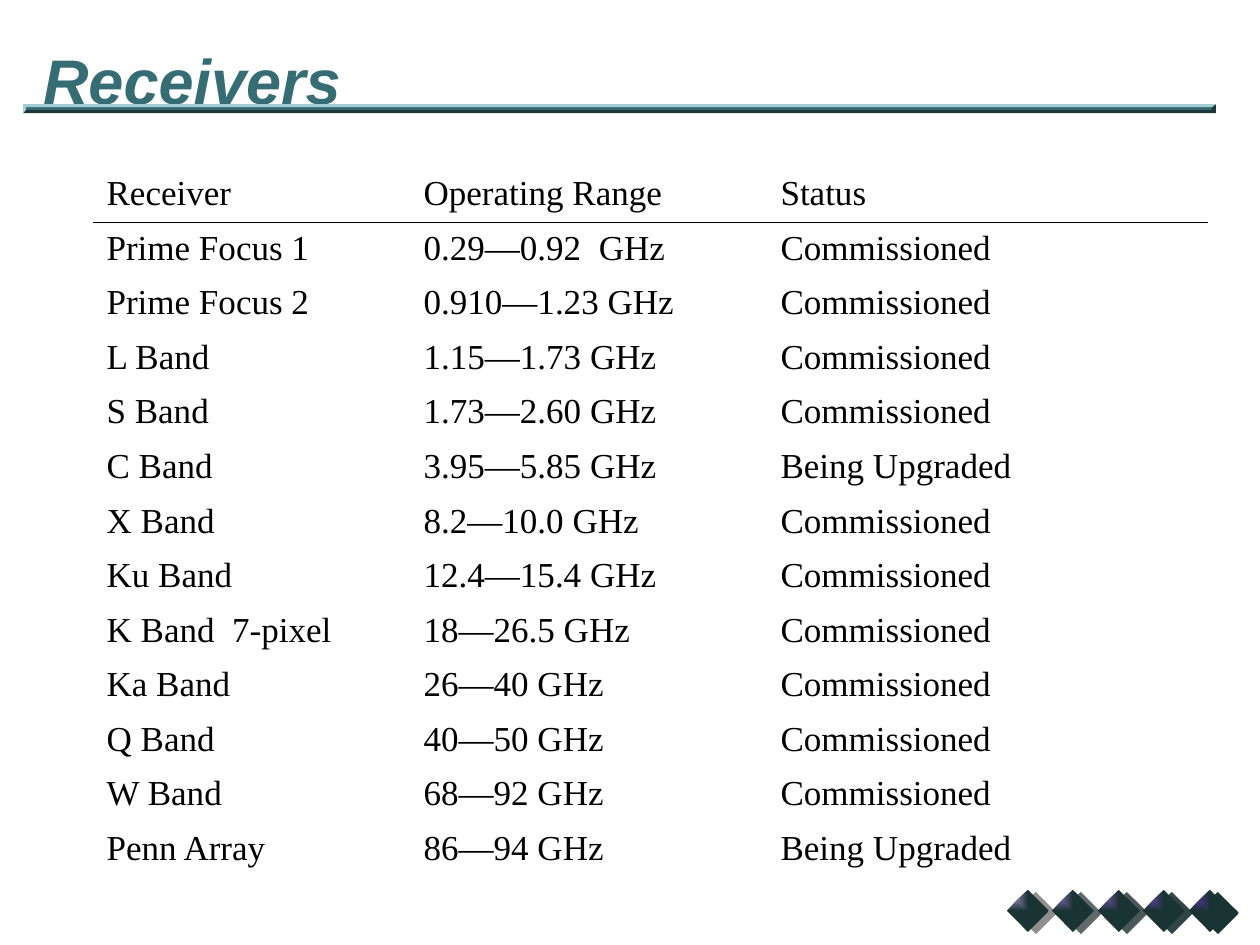
import pptx
import pptx.dml.color
import pptx.enum.shapes
import pptx.enum.text
import pptx.oxml
import pptx.oxml.ns
import pptx.util

EMU_PER_PX = 914400 / 126
NAMESPACE = pptx.oxml.ns.nsdecls("a")


def px(length):
    return pptx.util.Emu(round(length * EMU_PER_PX))


def color(hex_string):
    return pptx.dml.color.RGBColor.from_string(hex_string)


class SlideBuilder:
    teal = "366C74"
    dark_teal = "1B373A"
    light_teal = "A1CDD2"
    diamond_dark = "1A3333"
    title_font = "Arial"
    table_font = "Times New Roman"

    def __init__(self, slide):
        self.slide = slide

    def title(self, text, left, top, width, height):
        shape = self.slide.shapes.title
        shape.left, shape.top = px(left), px(top)
        shape.width, shape.height = px(width), px(height)
        frame = shape.text_frame
        frame.text = text
        frame.auto_size = pptx.enum.text.MSO_AUTO_SIZE.NONE
        frame.vertical_anchor = pptx.enum.text.MSO_ANCHOR.TOP
        frame.margin_left = frame.margin_right = frame.margin_bottom = 0
        frame.margin_top = px(6)
        paragraph = frame.paragraphs[0]
        paragraph.alignment = pptx.enum.text.PP_ALIGN.LEFT
        font = paragraph.font
        font.name, font.size = self.title_font, pptx.util.Pt(36)
        font.bold = font.italic = True
        font.color.rgb = color(self.teal)

    def finish(self, shape, fill):
        shape.shadow.inherit = False
        shape.line.fill.background()
        shape.fill.solid()
        shape.fill.fore_color.rgb = color(fill)

    def bar(self, left, top, width, height, fill):
        shape = self.slide.shapes.add_shape(
            pptx.enum.shapes.MSO_SHAPE.RECTANGLE, px(left), px(top), px(width), px(height))
        self.finish(shape, fill)

    def outline(self, points, fill):
        start, *rest = points
        builder = self.slide.shapes.build_freeform(*start, scale=EMU_PER_PX)
        builder.add_line_segments(rest, close=True)
        self.finish(builder.convert_to_shape(), fill)

    def diamond(self, left, top, size, inner, outer):
        shape = self.slide.shapes.add_shape(
            pptx.enum.shapes.MSO_SHAPE.DIAMOND, px(left), px(top), px(size), px(size))
        self.finish(shape, outer)
        shape.fill.gradient()
        for stop, stop_color in zip(shape.fill.gradient_stops, (inner, outer)):
            stop.color.rgb = color(stop_color)
        gradient = shape.element.spPr.find(pptx.oxml.ns.qn("a:gradFill"))
        gradient.remove(gradient.find(pptx.oxml.ns.qn("a:lin")))
        gradient.append(pptx.oxml.parse_xml(
            f'<a:path {NAMESPACE} path="rect"><a:fillToRect r="100000" b="100000"/></a:path>'))

    def borders(self, cell, top, bottom):
        properties = cell._tc.get_or_add_tcPr()
        sides = {"lnL": "FFFFFF", "lnR": "FFFFFF", "lnT": top, "lnB": bottom}
        for index, (side, line_color) in enumerate(sides.items()):
            properties.insert(index, pptx.oxml.parse_xml(
                f'<a:{side} {NAMESPACE} w="12700"><a:solidFill>'
                f'<a:srgbClr val="{line_color}"/></a:solidFill></a:{side}>'))

    def table(self, rows, left, top, widths, height):
        table = self.slide.shapes.add_table(
            len(rows), len(widths), px(left), px(top), px(sum(widths)), px(height)).table
        table.first_row = table.horz_banding = False
        for column, width in zip(table.columns, widths):
            column.width = px(width)
        for row_index, row in enumerate(rows):
            for column_index, text in enumerate(row):
                cell = table.cell(row_index, column_index)
                cell.text = text
                cell.fill.background()
                font = cell.text_frame.paragraphs[0].font
                font.name, font.size = self.table_font, pptx.util.Pt(20)
                font.color.rgb = color("000000")
                self.borders(cell,
                             top="000000" if row_index == 1 else "FFFFFF",
                             bottom="000000" if row_index == 0 else "FFFFFF")


def main():
    presentation = pptx.Presentation()
    presentation.slide_width = px(1260)
    presentation.slide_height = px(945)
    builder = SlideBuilder(presentation.slides.add_slide(presentation.slide_layouts[5]))

    back_colors = [("F2CCFF", "8F8F8F"), ("DEC7E5", "606A6A"), ("D3C4D9", "495858"),
                   ("C9C2CC", "314545"), ("BFBFBF", "1A3333")]
    front_colors = [(inner, builder.diamond_dark)
                    for inner in ("DDB2F9", "B27FEC", "9D66E6", "874CDF", "7233D9")]
    for left, top, colors in ((1015, 892, back_colors), (1007, 890, front_colors)):
        for index, (inner, outer) in reversed(list(enumerate(colors))):
            builder.diamond(left + index * 91 // 2, top, 42, inner, outer)

    builder.title("Receivers", 43, 35, 1153, 67)
    builder.bar(26, 107, 1186, 3, builder.teal)
    builder.outline([(23, 113), (1216, 113), (1216, 104), (1212, 107),
                     (1212, 110), (26, 110)], builder.dark_teal)
    builder.outline([(23, 113), (23, 104), (1216, 104), (1212, 107),
                     (26, 107), (26, 110)], builder.light_teal)

    done, upgrading = "Commissioned", "Being Upgraded"
    receivers = [
        ("Receiver", "Operating Range", "Status"),
        ("Prime Focus 1", "0.29—0.92  GHz", done),
        ("Prime Focus 2", "0.910—1.23 GHz", done),
        ("L Band", "1.15—1.73 GHz", done),
        ("S Band", "1.73—2.60 GHz", done),
        ("C Band", "3.95—5.85 GHz", upgrading),
        ("X Band", "8.2—10.0 GHz", done),
        ("Ku Band", "12.4—15.4 GHz", done),
        ("K Band  7-pixel", "18—26.5 GHz", done),
        ("Ka Band", "26—40 GHz", done),
        ("Q Band", "40—50 GHz", done),
        ("W Band", "68—92 GHz", done),
        ("Penn Array", "86—94 GHz", upgrading),
    ]
    builder.table(receivers, 94, 168, (317, 357, 439), 710)
    presentation.save("out.pptx")


if __name__ == "__main__":
    main()
